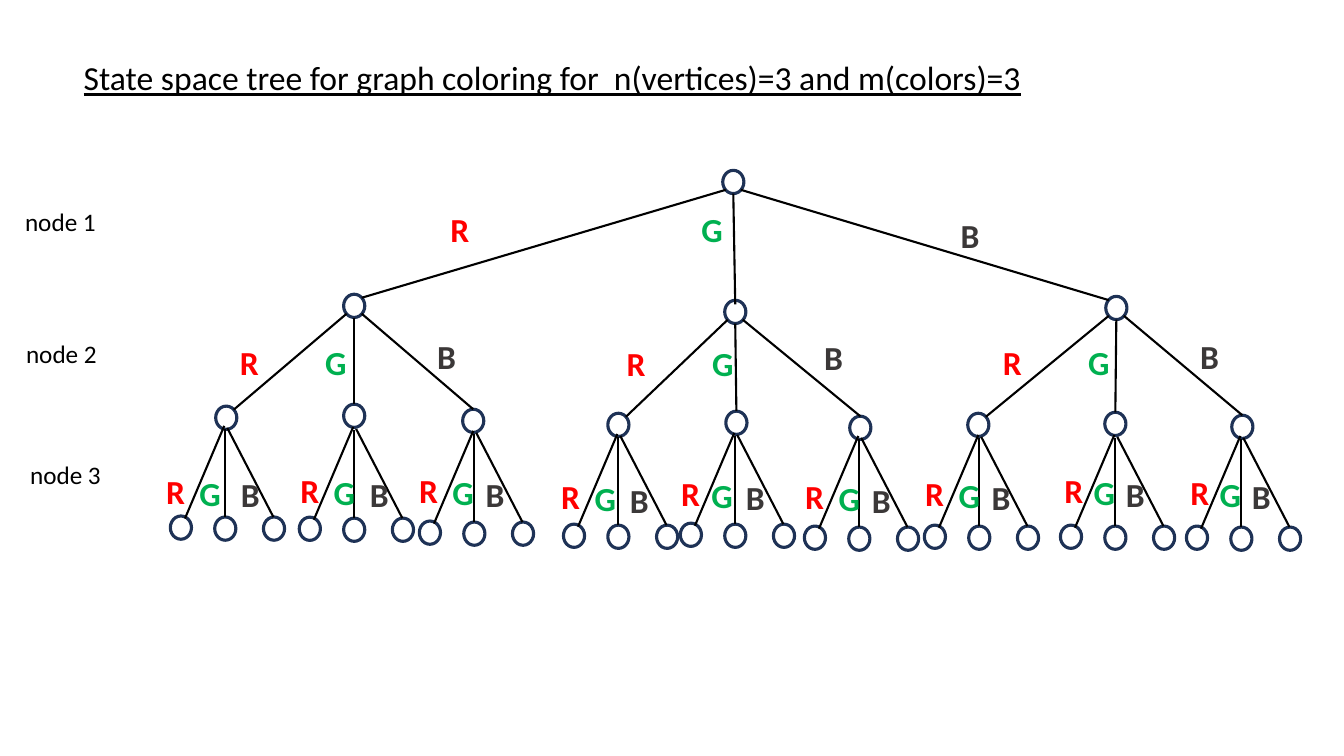
"""Draw the state space tree for colouring three vertices with three colours."""
from collections import namedtuple

from lxml import etree
from pptx import Presentation
from pptx import util as u
from pptx.dml.color import RGBColor
from pptx.enum import shapes, text

BLACK = RGBColor(0x00, 0x00, 0x00)
NAVY = RGBColor(0x1E, 0x32, 0x56)
RED = RGBColor(0xFF, 0x00, 0x00)
GREEN = RGBColor(0x00, 0xB0, 0x50)
GRAY = RGBColor(0x3B, 0x38, 0x38)
CHOICES = (("R", RED), ("G", GREEN), ("B", GRAY))

Branch = namedtuple("Branch", "vertex middle_leaf red_label green_gap blue_gap")

ROOT = (523.8, 130)
ROOT_LABELS = ((314.6, 146), (493.9, 145.4), (679, 149.8))
FIRST_VERTICES = ((253, 218.5), (525.2, 222.8), (797.4, 220))
FIRST_RED_LABELS = ((164.2, 240.5), (440.6, 241.2), (709.2, 240.5))
BRANCHES = (
    Branch((161.6, 298.4), (160.9, 377.6), (111.6, 332.6), 23.8, 53.3),
    Branch((253, 297), (253, 378.4), (207.4, 332), 23.8, 49.7),
    Branch((338, 300.6), (338.8, 381.2), (292.3, 332), 23.8, 47.5),
    Branch((441.7, 303.5), (441.7, 383.4), (393.8, 336.2), 23.8, 49),
    Branch((526, 302), (525.2, 382.7), (479.5, 334.1), 21.6, 46.1),
    Branch((614.5, 305.6), (613.8, 384.8), (568.1, 336.2), 23.8, 47.5),
    Branch((698.8, 303.5), (699.5, 384.1), (653.8, 334.1), 23.8, 47.5),
    Branch((796.7, 302.8), (796.7, 384.1), (753.1, 332), 21, 44),
    Branch((887.4, 304.9), (886.7, 384.8), (843.1, 333.4), 21, 44),
)

TOP = (0, -8.3)
BOTTOM = (0, 8.3)
LOWER_LEFT = (-5.4, 5.6)
LOWER_RIGHT = (5.4, 5.6)
UPPER_LEFT = (-5.4, -5.6)
UPPER_RIGHT = (5.4, -5.8)
FORK_STARTS = (LOWER_LEFT, BOTTOM, LOWER_RIGHT)
LEAF_OFFSETS = ((-31.7, -0.7), (0, 0), (34.8, 0))
LEAF_STARTS = ((-0.7, -73.4), (0, -71), (1.4, -72))
LEAF_ENDS = ((2.9, -6.5), TOP, (-0.4, -8.3))


def shift(point, offset):
    return point[0] + offset[0], point[1] + offset[1]


class TreeSlide:
    """Holds the style and the current slide."""

    font_name = "Calibri"
    vertex_size = (15.1, 16.6)

    def __init__(self, deck):
        self.slide = deck.slides.add_slide(deck.slide_layouts[5])

    def wording(self, frame, words, size, color, bold=False, underline=False):
        frame.word_wrap = True
        frame.auto_size = text.MSO_AUTO_SIZE.SHAPE_TO_FIT_TEXT
        frame.vertical_anchor = text.MSO_ANCHOR.TOP
        paragraph = frame.paragraphs[0]
        paragraph.alignment = text.PP_ALIGN.LEFT
        run = paragraph.add_run()
        run.text = words
        run.font.name = self.font_name
        run.font.size = u.Pt(size)
        run.font.bold = bold
        run.font.underline = underline
        run.font.color.rgb = color

    def title(self, words, left, top, width, height):
        heading = self.slide.shapes.title
        heading.left, heading.top = u.Pt(left), u.Pt(top)
        heading.width, heading.height = u.Pt(width), u.Pt(height)
        self.wording(heading.text_frame, words, 24, BLACK, underline=True)

    def label(self, words, corner, width, height, size, color, bold=False):
        box = self.slide.shapes.add_textbox(
            u.Pt(corner[0]), u.Pt(corner[1]), u.Pt(width), u.Pt(height))
        self.wording(box.text_frame, words, size, color, bold)

    def choices(self, corners):
        for (letter, color), corner in zip(CHOICES, corners):
            self.label(letter, corner, 26, 36, 24, color, bold=True)

    def vertex(self, center):
        width, height = self.vertex_size
        circle = self.slide.shapes.add_shape(
            shapes.MSO_SHAPE.OVAL, u.Pt(center[0] - width / 2),
            u.Pt(center[1] - height / 2), u.Pt(width), u.Pt(height))
        circle.shadow.inherit = False
        circle.fill.background()
        circle.line.color.rgb = NAVY
        circle.line.width = u.Pt(2.25)

    def edge(self, start, end):
        line = self.slide.shapes.add_connector(
            shapes.MSO_CONNECTOR.STRAIGHT, *(u.Pt(n) for n in start + end))
        line.line.color.rgb = BLACK
        line.line.width = u.Pt(1.5)
        properties = line.element.spPr
        etree.SubElement(properties, "{%s}effectLst" % properties.nsmap["a"])

    def fork(self, origin, children, starts, ends):
        for child, start, end in zip(children, starts, ends):
            self.vertex(child)
            self.edge(shift(origin, start), shift(child, end))


def main():
    deck = Presentation()
    deck.slide_width, deck.slide_height = u.Pt(960), u.Pt(540)
    tree = TreeSlide(deck)
    tree.title("State space tree for graph coloring for  n(vertices)=3 and m(colors)=3",
               52.6, 37.4, 739.4, 36)

    tree.vertex(ROOT)
    tree.fork(ROOT, FIRST_VERTICES, FORK_STARTS, (UPPER_RIGHT, (0, -5.4), UPPER_LEFT))
    tree.choices(ROOT_LABELS)

    for index, (vertex, red) in enumerate(zip(FIRST_VERTICES, FIRST_RED_LABELS)):
        children = [branch.vertex for branch in BRANCHES[3 * index:3 * index + 3]]
        tree.fork(vertex, children, FORK_STARTS, (UPPER_RIGHT, TOP, TOP))
        tree.choices((red, shift(red, (61, 0.2)), shift(red, (141, -4))))

    for branch in BRANCHES:
        leaves = [shift(branch.middle_leaf, offset) for offset in LEAF_OFFSETS]
        tree.fork(branch.middle_leaf, leaves, LEAF_STARTS, LEAF_ENDS)
        red = branch.red_label
        tree.choices((red, shift(red, (branch.green_gap, 1.9)),
                      shift(red, (branch.blue_gap, 2.7))))

    for level, corner in enumerate(((10.8, 144), (11.5, 238.3), (14.4, 324.7)), 1):
        tree.label(f"node {level}", corner, 90, 29, 18, BLACK)

    deck.save("out.pptx")


if __name__ == "__main__":
    main()
